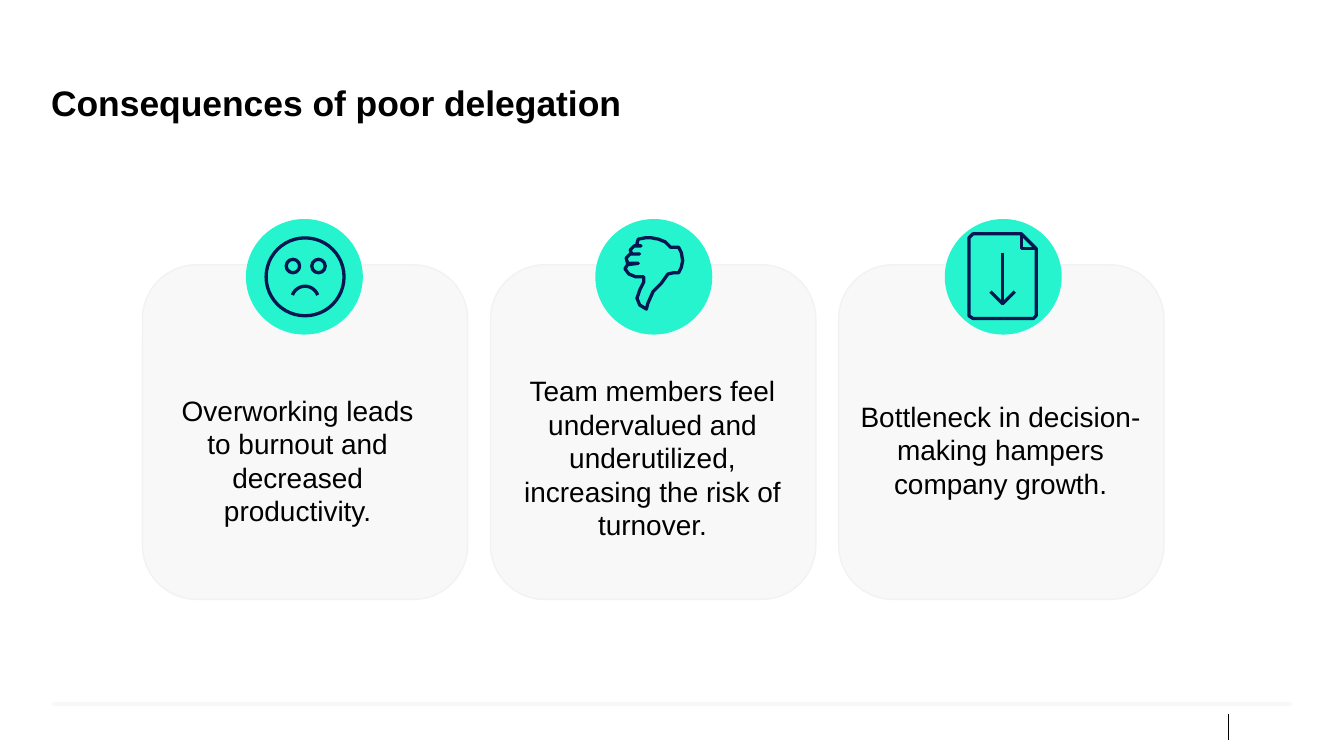
import math
import pptx
import pptx.util
import pptx.dml.color
import pptx.enum.shapes
import pptx.enum.text
import pptx.oxml.ns
import lxml.etree

Inches = pptx.util.Inches
Kind = pptx.enum.shapes.MSO_SHAPE
qn = pptx.oxml.ns.qn
NAVY = "051651"


def tint(color, code):
    color.rgb = pptx.dml.color.RGBColor.from_string(code)


def style(shape, fill, line, width):
    shape.shadow.inherit = False
    if fill:
        shape.fill.solid()
        tint(shape.fill.fore_color, fill)
    else:
        shape.fill.background()
    if line:
        tint(shape.line.color, line)
        shape.line.width = pptx.util.Pt(width)
        edge = shape._element.spPr.find(qn("a:ln"))
        lxml.etree.SubElement(edge, qn("a:round"))
    else:
        shape.line.fill.background()


deck = pptx.Presentation()
deck.slide_width = Inches(10)
deck.slide_height = Inches(10) * 9 // 16
slide = deck.slides.add_slide(deck.slide_layouts[5])
shapes = slide.shapes

rules = [
    (0.39, 5.24, 9.61, 5.24, "F8F8F8", 2.25),
    (9.14, 5.31, 9.14, 5.51, "000000", 0.75),
]
for x, y, right, low, code, width in rules:
    rule = shapes.add_connector(
        pptx.enum.shapes.MSO_CONNECTOR.STRAIGHT,
        Inches(x), Inches(y), Inches(right), Inches(low))
    tint(rule.line.color, code)
    rule.line.width = pptx.util.Pt(width)
    lxml.etree.SubElement(rule._element.spPr, qn("a:effectLst"))

title = shapes.title
title.left, title.top = Inches(0.38), Inches(0.59)
title.width, title.height = Inches(9.23), Inches(0.35)
title.text_frame.text = "Consequences of poor delegation"

for i in range(3):
    card = shapes.add_shape(
        Kind.ROUNDED_RECTANGLE, Inches(1.06 + 2.59 * i), Inches(1.97),
        Inches(2.42), Inches(2.49))
    card.adjustments[0] = 0.167
    style(card, "F8F8F8", "F2F2F2", 0.75)

for i in range(3):
    badge = shapes.add_shape(
        Kind.OVAL, Inches(1.83 + 2.6 * i), Inches(1.63),
        Inches(0.87), Inches(0.86))
    style(badge, "26F4CE", None, 0)

frames = [(title.text_frame, 19, True, pptx.enum.text.PP_ALIGN.LEFT)]
notes = [
    (1.3, 3.14, 1.83,
     "Overworking leads to burnout and decreased productivity."),
    (6.4, 3.06, 2.09,
     "Bottleneck in decision-making hampers company growth."),
    (3.81, 3.12, 2.09,
     "Team members feel undervalued and underutilized, "
     "increasing the risk of turnover."),
]
for x, y, width, words in notes:
    box = shapes.add_textbox(Inches(x), Inches(y), Inches(width), Inches(0.57))
    box.text_frame.text = words
    frames.append((box.text_frame, 15, False,
                   pptx.enum.text.PP_ALIGN.CENTER))

for frame, size, bold, align in frames:
    frame.word_wrap = True
    frame.auto_size = pptx.enum.text.MSO_AUTO_SIZE.NONE
    frame.vertical_anchor = pptx.enum.text.MSO_ANCHOR.MIDDLE
    frame.margin_left = frame.margin_right = 0
    frame.margin_top = frame.margin_bottom = 0
    para = frame.paragraphs[0]
    para.alignment = align
    para.font.name = "Arial"
    para.font.size = pptx.util.Pt(size)
    para.font.bold = bold
    tint(para.font.color, "000000")

for x, y, r in [(2.27, 2.06, 0.29), (2.18, 1.98, 0.05), (2.37, 1.98, 0.05)]:
    ring = shapes.add_shape(
        Kind.OVAL, Inches(x - r), Inches(y - r), Inches(2 * r), Inches(2 * r))
    style(ring, None, NAVY, 1.75)

mouth = []
for turn in range(200, 341, 10):
    a = math.radians(turn)
    mouth.append((2.27 + 0.1 * math.cos(a), 2.23 + 0.1 * math.sin(a)))

thumb = [
    (5.05, 1.84), (4.99, 1.84), (4.95, 1.8), (4.9, 1.78), (4.85, 1.77),
    (4.8, 1.77), (4.75, 1.78), (4.74, 1.81), (4.75, 1.83), (4.77, 1.83),
    (4.72, 1.83), (4.69, 1.86), (4.7, 1.89), (4.76, 1.89), (4.69, 1.89),
    (4.66, 1.92), (4.67, 1.96), (4.75, 1.96), (4.67, 1.97), (4.65, 2),
    (4.68, 2.04), (4.73, 2.06), (4.79, 2.06), (4.79, 2.1), (4.76, 2.16),
    (4.74, 2.22), (4.76, 2.27), (4.81, 2.3), (4.82, 2.26), (4.86, 2.17),
    (4.92, 2.11), (4.97, 2.04), (5.01, 2.03), (5.05, 2.03), (5.07, 1.99),
    (5.08, 1.94), (5.07, 1.88),
]
page = [
    (7.24, 1.74), (7.6, 1.74), (7.71, 1.85), (7.71, 2.35), (7.69, 2.37),
    (7.24, 2.37), (7.21, 2.35), (7.21, 1.77),
]
fold = [(7.6, 1.74), (7.6, 1.85), (7.71, 1.85)]
stem = [(7.46, 1.88), (7.46, 2.26)]
head = [(7.37, 2.17), (7.46, 2.26), (7.55, 2.17)]

for dots, close in [(mouth, False), (thumb, True), (page, True),
                    (fold, False), (stem, False), (head, False)]:
    spots = [(Inches(x), Inches(y)) for x, y in dots]
    pen = shapes.build_freeform(*spots[0])
    pen.add_line_segments(spots[1:], close=close)
    style(pen.convert_to_shape(), None, NAVY, 1.75)

deck.save("out.pptx")
